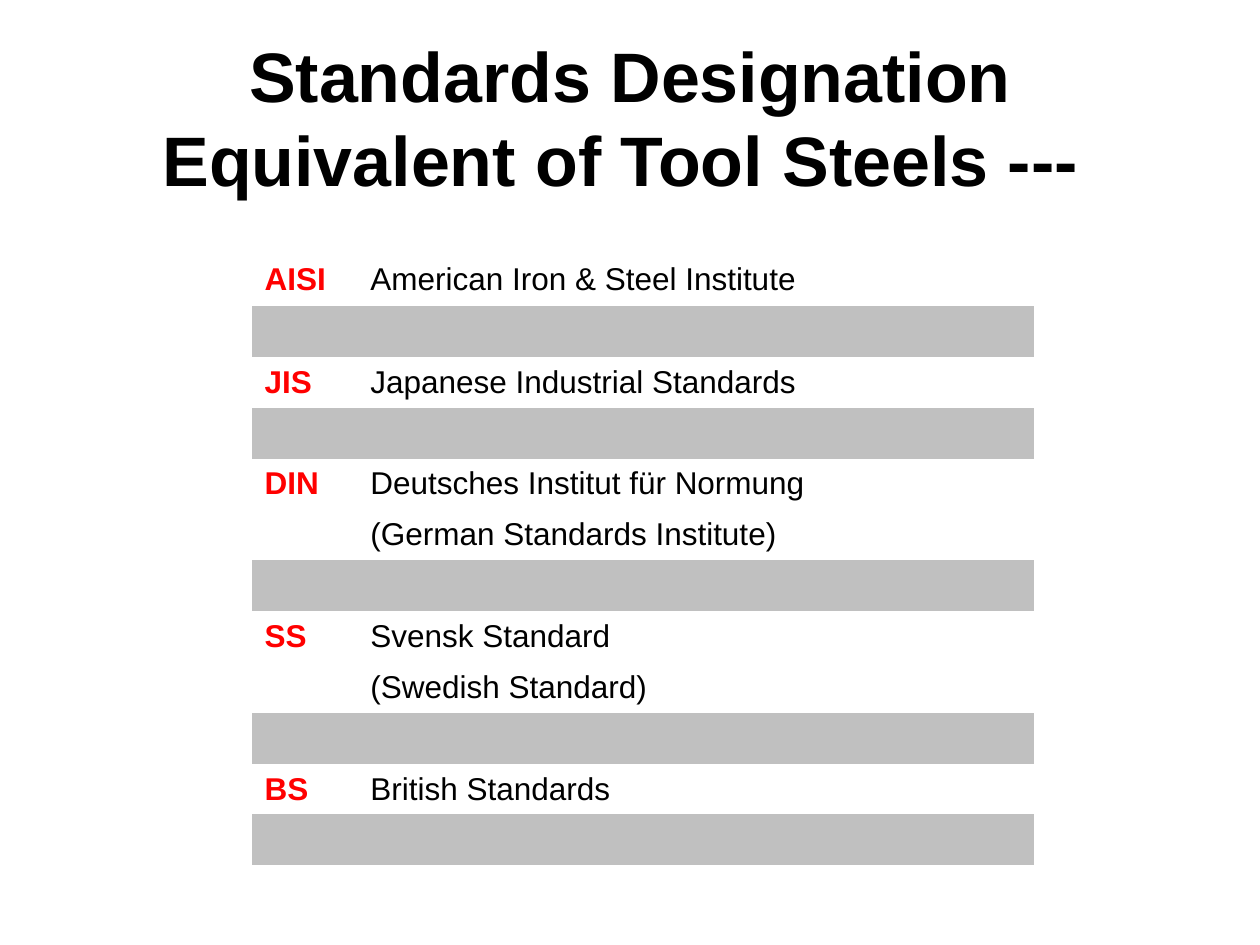
from pptx import Presentation
from pptx.dml.color import RGBColor
from pptx.enum.text import MSO_ANCHOR, PP_ALIGN
from pptx.util import Inches, Pt

MIDDLE = MSO_ANCHOR.MIDDLE
CENTER = PP_ALIGN.CENTER

BLACK = RGBColor(0, 0, 0)
RED = RGBColor(255, 0, 0)
GRAY = RGBColor(192, 192, 192)
FONT = "Arial"
NO_STYLE_NO_GRID = "{2D5ABB26-0587-4C30-8999-92F81FD0307C}"
TITLE_ONLY = 5

TITLE = "Standards Designation Equivalent of Tool Steels --- "
STANDARDS = [
    ("AISI", ["American Iron & Steel Institute"]),
    ("JIS", ["Japanese Industrial Standards"]),
    ("DIN", ["Deutsches Institut für Normung", "(German Standards Institute)"]),
    ("SS", ["Svensk Standard", "(Swedish Standard)"]),
    ("BS", ["British Standards"]),
]
COLUMN_WIDTHS = [0.84, 5.37]
FIRST_ROW_HEIGHT, ROW_HEIGHT = 0.43, 0.4


def add_run(paragraph, text, size, color, bold):
    run = paragraph.add_run()
    run.text = text
    run.font.name = FONT
    run.font.size = Pt(size)
    run.font.bold = bold
    run.font.color.rgb = color


def add_title(slide):
    title = slide.shapes.title
    title.left, title.top = Inches(0.5), Inches(0.3)
    title.width, title.height = Inches(9), Inches(1.25)
    frame = title.text_frame
    frame.word_wrap = True
    frame.vertical_anchor = MIDDLE
    paragraph = frame.paragraphs[0]
    paragraph.alignment = CENTER
    add_run(paragraph, TITLE, 40, BLACK, True)


def table_rows():
    """One row per name line; None marks the gray separator after each standard."""
    rows = []
    for code, names in STANDARDS:
        for index, name in enumerate(names):
            rows.append(("" if index else code, name))
        rows.append(None)
    return rows


def add_standards_table(slide):
    rows = table_rows()
    heights = [FIRST_ROW_HEIGHT] + [ROW_HEIGHT] * (len(rows) - 1)
    frame = slide.shapes.add_table(
        len(rows), len(COLUMN_WIDTHS), Inches(2), Inches(2),
        Inches(sum(COLUMN_WIDTHS)), Inches(sum(heights)))
    table = frame.table
    table.first_row = table.horz_banding = False
    table._tbl.tblPr[0].text = NO_STYLE_NO_GRID
    for column, width in zip(table.columns, COLUMN_WIDTHS):
        column.width = Inches(width)

    for row_index, (row, height) in enumerate(zip(rows, heights)):
        table.rows[row_index].height = Inches(height)
        cells = table.rows[row_index].cells
        if row is None:
            cells[0].merge(cells[1])
            cells[0].fill.solid()
            cells[0].fill.fore_color.rgb = GRAY
            continue
        for cell, text, color, bold in zip(cells, row, (RED, BLACK), (True, False)):
            cell.fill.background()
            cell.vertical_anchor = MIDDLE
            if text:
                add_run(cell.text_frame.paragraphs[0], text, 18, color, bold)


def main():
    presentation = Presentation()
    presentation.slide_width, presentation.slide_height = Inches(10), Inches(7.5)
    slide = presentation.slides.add_slide(presentation.slide_layouts[TITLE_ONLY])
    add_title(slide)
    add_standards_table(slide)
    presentation.save("out.pptx")


if __name__ == "__main__":
    main()
